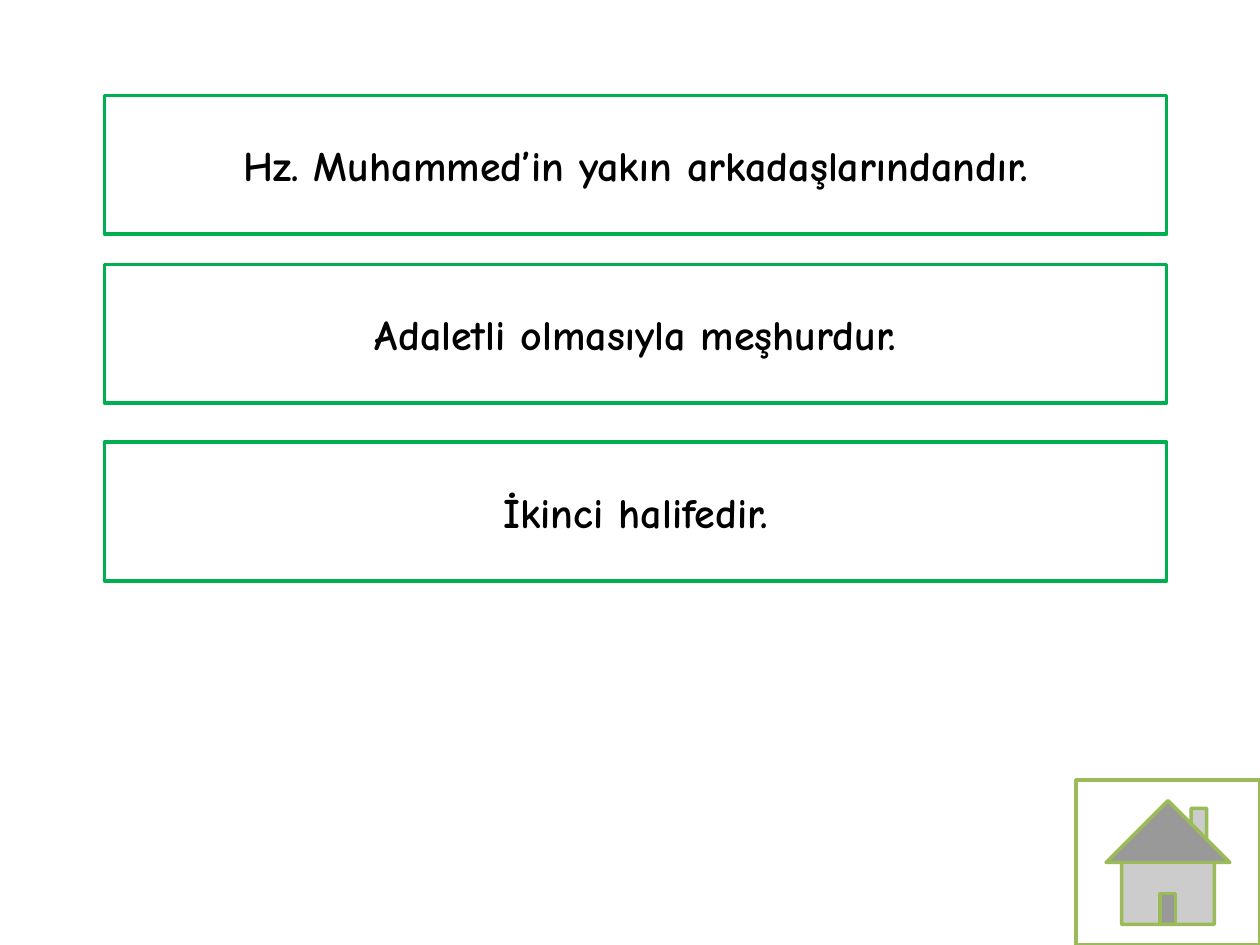
"""Build a slide of three clue boxes with a home button."""
from pptx import Presentation
from pptx.dml.color import RGBColor
from pptx.enum.shapes import MSO_SHAPE as Shape
from pptx.enum.text import MSO_ANCHOR as Anchor, PP_ALIGN as Align
from pptx.util import Inches, Pt

CLUES = [
    ("Hz. Muhammed’in yakın arkadaşlarındandır.", 0.76),
    ("Adaletli olmasıyla meşhurdur.", 2.1),
    ("İkinci halifedir.", 3.51),
]
CLUE_LEFT, CLUE_WIDTH, CLUE_HEIGHT = 0.83, 8.43, 1.1
HOME_BOX = (8.54, 6.19, 1.46, 1.31)
WHITE, BLACK, GREEN, OLIVE = "FFFFFF", "000000", "00B050", "9BBB59"
CLUE_FONT = {"name": "Comic Neue", "size": Pt(24), "bold": True}


def color(value):
    return RGBColor.from_string(value)


def add_box(slide, kind, box, line_color):
    shape = slide.shapes.add_shape(kind, *map(Inches, box))
    shape.shadow.inherit = False
    shape.fill.solid()
    shape.fill.fore_color.rgb = color(WHITE)
    shape.line.color.rgb = color(line_color)
    shape.line.width = Pt(2)
    return shape


def add_clue(slide, text, top):
    box = (CLUE_LEFT, top, CLUE_WIDTH, CLUE_HEIGHT)
    shape = add_box(slide, Shape.RECTANGLE, box, GREEN)
    shape.text_frame.vertical_anchor = Anchor.MIDDLE
    paragraph = shape.text_frame.paragraphs[0]
    paragraph.alignment = Align.CENTER
    run = paragraph.add_run()
    run.text = text
    for name, value in CLUE_FONT.items():
        setattr(run.font, name, value)
    run.font.color.rgb = color(BLACK)


def main():
    presentation = Presentation()
    presentation.slide_width = Inches(10)
    presentation.slide_height = Inches(7.5)
    slide = presentation.slides.add_slide(presentation.slide_layouts[6])
    for text, top in CLUES:
        add_clue(slide, text, top)
    add_box(slide, Shape.ACTION_BUTTON_HOME, HOME_BOX, OLIVE)
    presentation.save("out.pptx")


if __name__ == "__main__":
    main()
